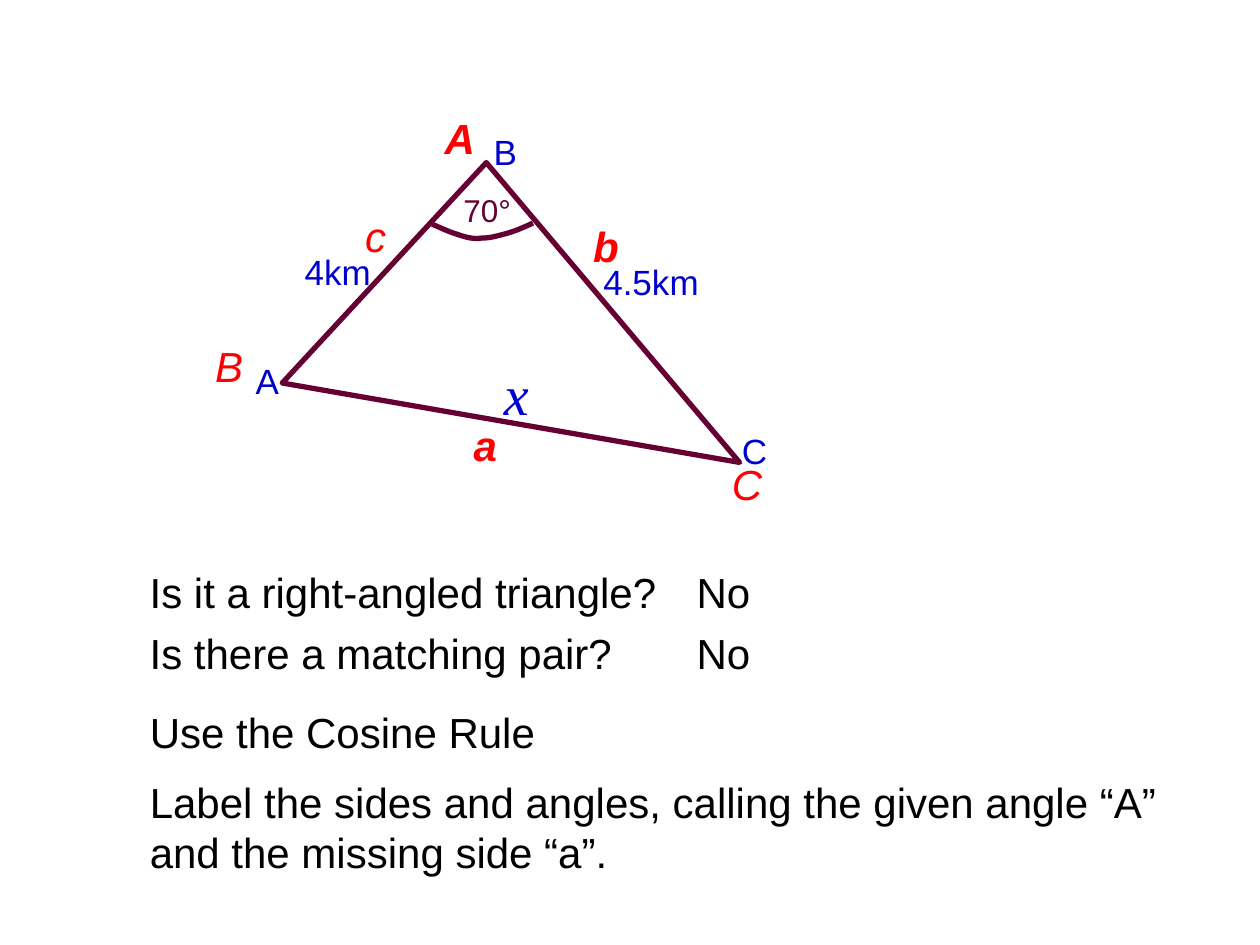
from dataclasses import dataclass

from pptx import Presentation
from pptx.dml.color import RGBColor
from pptx.enum.text import MSO_ANCHOR, MSO_AUTO_SIZE as AutoSize
from pptx.util import Inches, Pt

COLORS = {"given": "0000CC", "rule": "FF0000", "outline": "660033", "body": "000000"}
COLUMNS, ROWS = 100, 75  # grid over the whole slide

presentation = Presentation()
presentation.slide_width, presentation.slide_height = Inches(10), Inches(7.5)
CELL_WIDTH = presentation.slide_width / COLUMNS
CELL_HEIGHT = presentation.slide_height / ROWS
slide = presentation.slides.add_slide(presentation.slide_layouts[6])

Point = tuple[float, float]


@dataclass
class Label:
    text: str
    column: float
    row: float
    columns: float = 7.9
    bold: bool = False


def to_emu(point: Point) -> Point:
    return point[0] * CELL_WIDTH, point[1] * CELL_HEIGHT


def add_text(label: Label, *, size: int = 24, color: str = "body",
             font: str = "Arial", italic: bool = False, lines: int = 1) -> None:
    left, top = to_emu((label.column, label.row))
    height = Pt(size * 1.2 * lines) + Inches(0.1)
    box = slide.shapes.add_textbox(int(left), int(top), int(label.columns * CELL_WIDTH), height)
    frame = box.text_frame
    frame.word_wrap = True
    frame.auto_size = AutoSize.SHAPE_TO_FIT_TEXT
    frame.vertical_anchor = MSO_ANCHOR.TOP
    run = frame.paragraphs[0].add_run()
    run.text = label.text
    run.font.name, run.font.size = font, Pt(size)
    run.font.bold, run.font.italic = label.bold, italic
    run.font.color.rgb = RGBColor.from_string(COLORS[color])


def add_outline(points: list[Point], *, closed: bool) -> None:
    start, *others = map(to_emu, points)
    builder = slide.shapes.build_freeform(*start)
    builder.add_line_segments(others, close=closed)
    shape = builder.convert_to_shape()
    shape.shadow.inherit = False
    shape.fill.background()
    shape.line.color.rgb = RGBColor.from_string(COLORS["outline"])
    shape.line.width = Pt(3)


def curve_points(controls: list[Point], steps: int = 8) -> list[Point]:
    """Sample a chain of cubic Bézier curves that share their end points."""
    points = [controls[0]]
    for first in range(0, len(controls) - 1, 3):
        segment = controls[first:first + 4]
        for step in range(1, steps + 1):
            t = step / steps
            weights = ((1 - t) ** 3, 3 * t * (1 - t) ** 2, 3 * t ** 2 * (1 - t), t ** 3)
            points.append(tuple(sum(weight * point[axis] for weight, point in zip(weights, segment))
                                for axis in (0, 1)))
    return points


# Triangle and its angle arc
add_outline([(22.4, 30.4), (38.6, 12.9), (58.7, 36.7)], closed=True)
ARC = [(34.3, 17.8), (34.6, 17.9), (35.6, 18.4), (36.3, 18.6), (36.9, 18.8),
       (37.5, 19), (38.2, 18.9), (38.9, 18.9), (39.6, 18.7), (40.3, 18.5),
       (41, 18.3), (41.9, 17.9), (42.3, 17.7)]
add_outline(curve_points(ARC), closed=False)

# Given lengths and corner names
for given in (
    Label("4km", 23.2, 19.4),
    Label("4.5km", 46.9, 20.2, 11),
    Label("A", 19.3, 28),
    Label("B", 38.2, 9.9),
    Label("C", 57.9, 33.6),
):
    add_text(given, size=20, color="given")

# Given angle and unknown side
add_text(Label("70°", 35.8, 14.7, 6.3), size=18, color="outline")
add_text(Label("x", 39, 28, 6.3), size=32, color="given", font="Times New Roman", italic=True)

# Questions with answers
TEXT_COLUMN, ANSWER_COLUMN = 10.9, 54.3
for question, row, columns in (
    ("Is it a right-angled triangle?", 44.5, 43.4),
    ("Is there a matching pair?", 49.3, 43.4),
):
    add_text(Label(question, TEXT_COLUMN, row, columns))
    add_text(Label("No", ANSWER_COLUMN, row, 10.1))

# Method
add_text(Label("Use the Cosine Rule", TEXT_COLUMN, 55.6, 50.5))
add_text(Label("Label the sides and angles, calling the given angle “A” "
               "and the missing side “a”.", TEXT_COLUMN, 61.1, 82.8), lines=2)

# Cosine rule names for angles and sides
for name in (
    Label("A", 34.3, 8.4, bold=True),
    Label("a", 36.6, 32.8, bold=True),
    Label("B", 16.1, 26.5),
    Label("b", 46.1, 17, bold=True),
    Label("C", 57.1, 35.9),
    Label("c", 28, 16.2, 5.5),
):
    add_text(name, color="rule", italic=True)

presentation.save("out.pptx")
